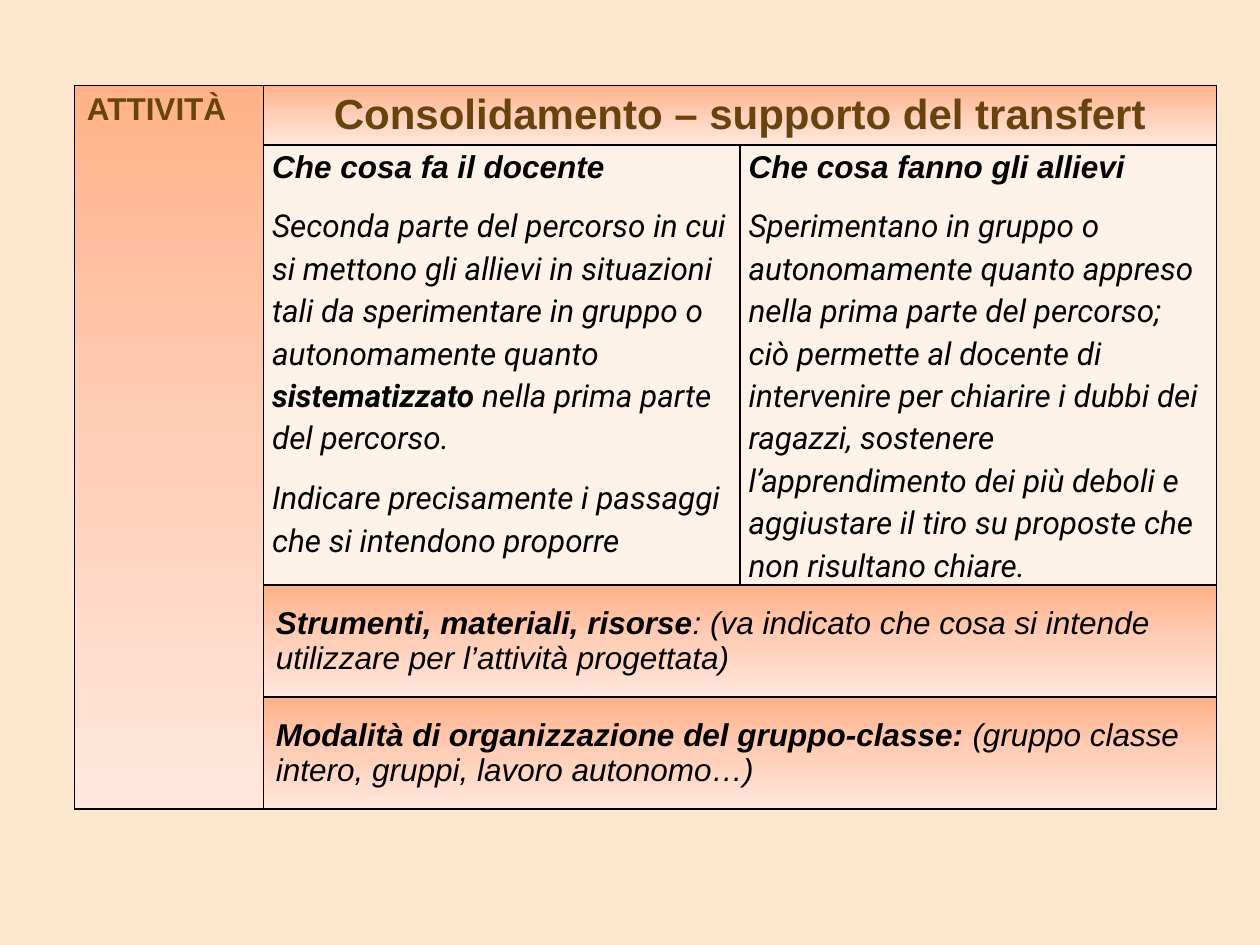
from dataclasses import dataclass

from lxml.etree import SubElement
from pptx import Presentation
from pptx.dml.color import RGBColor
from pptx.enum.text import MSO_ANCHOR, PP_ALIGN
from pptx.oxml.ns import qn
from pptx.util import Pt


@dataclass(frozen=True)
class Theme:
    back: str = "FDE7CF"
    pale: str = "FCF2E8"
    brown: str = "67430D"
    black: str = "000000"
    fade: tuple = ((0, "FFB288"), (50, "FFCEB8"), (100, "FFE7DC"))
    head: str = "Arial"
    body: str = "Roboto"
    title: int = 24
    text: int = 18
    line: int = 1


THEME = Theme()
COLS = (108, 272.3, 272.3)
ROWS = (33.4, 224, 64, 64)

TEACHER = (
    [("Che cosa fa il docente", True)],
    [("Seconda parte del percorso in cui si mettono gli allievi in situazioni "
      "tali da sperimentare in gruppo o autonomamente quanto ", False),
     ("sistematizzato", True),
     (" nella prima parte del percorso.", False)],
    [("Indicare precisamente i passaggi che si intendono proporre", False)],
)
PUPILS = (
    [("Che cosa fanno gli allievi", True)],
    [("Sperimentano in gruppo o autonomamente quanto appreso nella prima parte "
      "del percorso; ciò permette al docente di intervenire per chiarire i "
      "dubbi dei ragazzi, sostenere l’apprendimento dei più deboli e "
      "aggiustare il tiro su proposte che non risultano chiare.", False)],
)
TOOLS = [
    ("Strumenti, materiali, risorse", True),
    (": (va indicato che cosa si intende utilizzare per l’attività progettata)",
     False),
]
MODES = [
    ("Modalità di organizzazione del gruppo-classe: ", True),
    ("(gruppo classe intero, gruppi, lavoro autonomo…)", False),
]


def add_color(parent, color):
    SubElement(parent, qn("a:srgbClr"), val=color)


def add_edges(cell):
    props = cell._tc.get_or_add_tcPr()
    for side in ("lnL", "lnR", "lnT", "lnB"):
        edge = SubElement(props, qn(f"a:{side}"), w=str(Pt(THEME.line)))
        add_color(SubElement(edge, qn("a:solidFill")), THEME.black)


def add_fade(cell):
    """Fill the cell with the three-stop vertical gradient."""
    grad = SubElement(cell._tc.get_or_add_tcPr(), qn("a:gradFill"))
    stops = SubElement(grad, qn("a:gsLst"))
    for place, color in THEME.fade:
        add_color(SubElement(stops, qn("a:gs"), pos=str(place * 1000)), color)
    SubElement(grad, qn("a:lin"), ang=str(90 * 60000), scaled="0")


def paint(table):
    for row in range(len(ROWS)):
        for col in range(len(COLS)):
            cell = table.cell(row, col)
            add_edges(cell)
            if row == 1 and col > 0:
                cell.fill.solid()
                cell.fill.fore_color.rgb = RGBColor.from_string(THEME.pale)
            else:
                add_fade(cell)


def add_runs(para, runs, font=THEME.head, size=THEME.text,
             color=THEME.black, italic=True):
    for words, bold in runs:
        run = para.add_run()
        run.text = words
        face = run.font
        face.name, face.size = font, Pt(size)
        face.bold, face.italic = bold, italic
        face.color.rgb = RGBColor.from_string(color)


def fill_column(cell, paras):
    """Write a heading in the head font and the rest in the body font."""
    cell.margin_left = cell.margin_right = Pt(5)
    cell.margin_top = cell.margin_bottom = 0
    frame = cell.text_frame
    for index, runs in enumerate(paras):
        para = frame.add_paragraph() if index else frame.paragraphs[0]
        para.line_spacing = 1.15
        para.space_after = Pt(10)
        add_runs(para, runs, THEME.body if index else THEME.head)


def fill_band(cell, runs, **style):
    cell.vertical_anchor = MSO_ANCHOR.MIDDLE
    add_runs(cell.text_frame.paragraphs[0], runs, **style)


def add_grid(slide):
    table = slide.shapes.add_table(
        len(ROWS), len(COLS), Pt(42.5), Pt(48.8),
        Pt(sum(COLS)), Pt(sum(ROWS))).table
    for col, width in zip(table.columns, COLS):
        col.width = Pt(width)
    for row, height in zip(table.rows, ROWS):
        row.height = Pt(height)
    paint(table)
    table.cell(0, 0).merge(table.cell(3, 0))
    for row in (0, 2, 3):
        table.cell(row, 1).merge(table.cell(row, 2))
    return table


def main():
    deck = Presentation()
    deck.slide_width, deck.slide_height = Pt(720), Pt(540)
    slide = deck.slides.add_slide(deck.slide_layouts[6])
    back = slide.background.fill
    back.solid()
    back.fore_color.rgb = RGBColor.from_string(THEME.back)

    table = add_grid(slide)
    add_runs(table.cell(0, 0).text_frame.paragraphs[0], [("ATTIVITÀ", True)],
             color=THEME.brown, italic=False)
    title = table.cell(0, 1)
    fill_band(title, [("Consolidamento – supporto del transfert", True)],
              size=THEME.title, color=THEME.brown, italic=False)
    title.text_frame.paragraphs[0].alignment = PP_ALIGN.CENTER
    fill_column(table.cell(1, 1), TEACHER)
    fill_column(table.cell(1, 2), PUPILS)
    fill_band(table.cell(2, 1), TOOLS)
    fill_band(table.cell(3, 1), MODES)
    deck.save("out.pptx")


if __name__ == "__main__":
    main()
